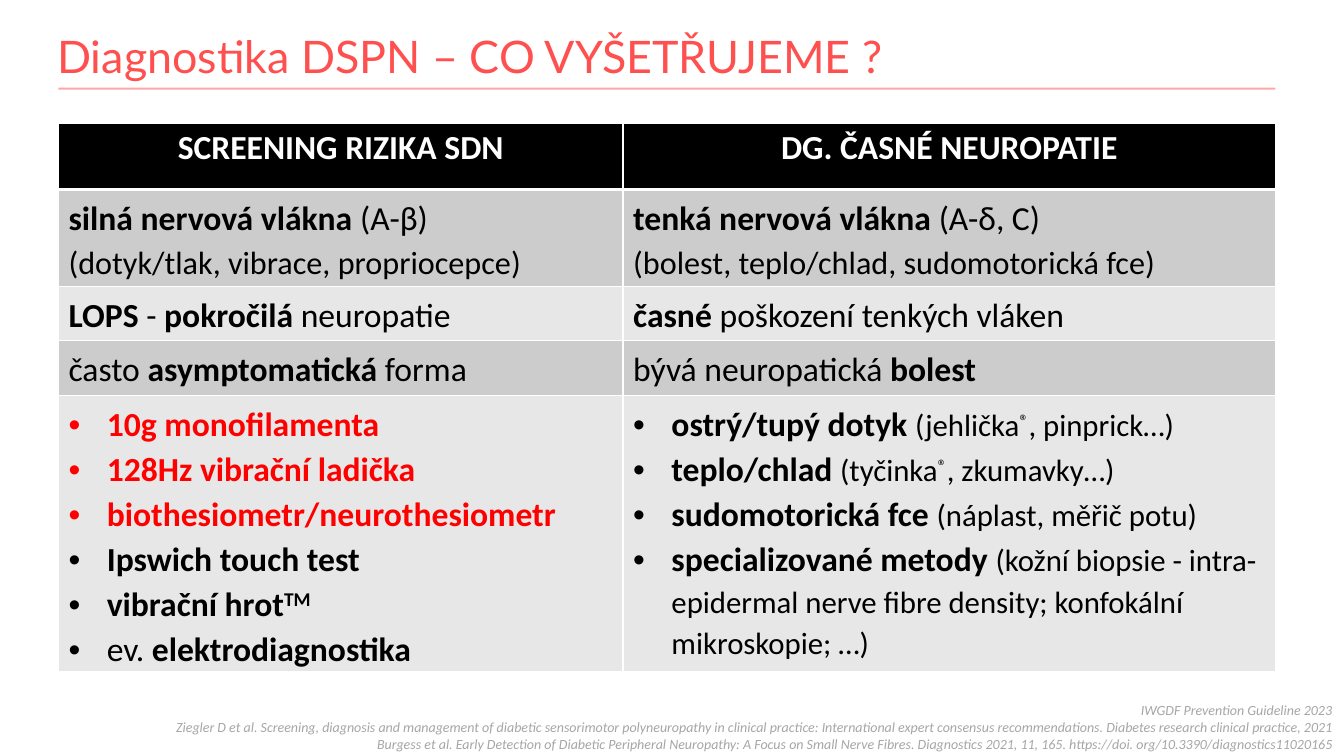
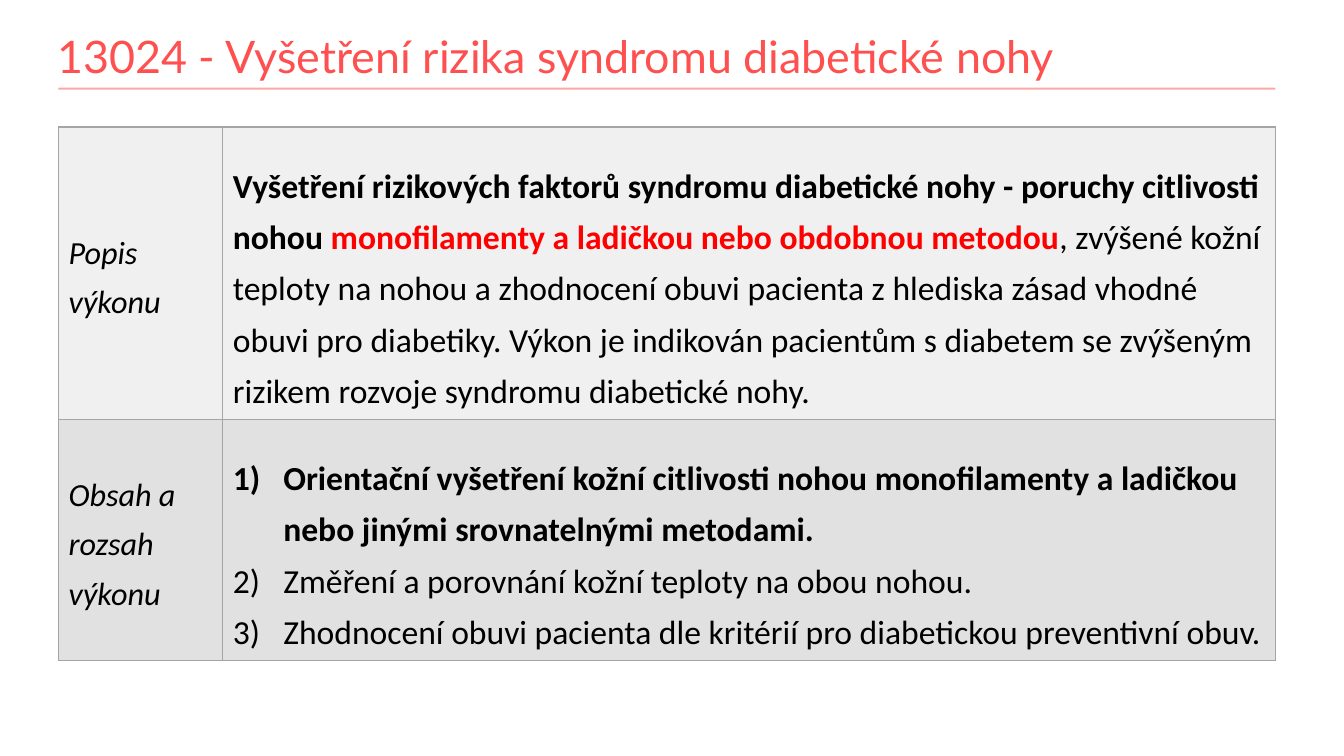
import lxml.etree
import pptx
import pptx.dml.color
import pptx.enum.shapes
import pptx.enum.text
import pptx.oxml.ns
import pptx.util

Inches = pptx.util.Inches
Pt = pptx.util.Pt
ALIGN = pptx.enum.text.PP_ALIGN
ANCHOR = pptx.enum.text.MSO_ANCHOR

ACCENT, RED, BLACK, WHITE = "FF5050", "FF0000", "000000", "FFFFFF"
LEFT, RIGHT = 0.58, 12.65
BOLD = {"bold": True}
RED_BOLD = {"bold": True, "color": RED}
SMALL = {"size": 22}
SUPER = {"size": 22, "baseline": 30}

DOT = ("buChar", {"char": "•"}, 0.38)
NUMBER = ("buAutoNum", {"type": "arabicParenR"}, 0.5)


def rgb(value):
    return pptx.dml.color.RGBColor.from_string(value)


def add_child(parent, tag, **attributes):
    return lxml.etree.SubElement(parent, pptx.oxml.ns.qn("a:" + tag), attributes)


def add_run(paragraph, text, size=24, font="Calibri", color=BLACK, bold=False,
            italic=False, baseline=0):
    run = paragraph.add_run()
    run.text = text
    run.font.size = Pt(size)
    run.font.name = font
    run.font.color.rgb = rgb(color)
    run.font.bold = bold
    run.font.italic = italic
    if baseline:
        run.font._element.set("baseline", str(baseline * 1000))


def set_bullet(paragraph, bullet):
    tag, attributes, indent = bullet
    properties = paragraph._p.get_or_add_pPr()
    properties.set("marL", str(Inches(indent)))
    properties.set("indent", str(-Inches(indent)))
    add_child(properties, "buFont", typeface="Arial" if tag == "buChar" else "+mj-lt")
    add_child(properties, tag, **attributes)


def write(frame, paragraphs, align=ALIGN.LEFT, spacing=None, bullet=None, **style):
    """Fill a frame; each paragraph is a string or a list of (text, format) runs."""
    frame.word_wrap = True
    for index, runs in enumerate(paragraphs):
        paragraph = frame.paragraphs[0] if index == 0 else frame.add_paragraph()
        paragraph.alignment = align
        if spacing:
            paragraph.line_spacing = spacing
        if bullet:
            set_bullet(paragraph, bullet)
        for text, own in [(runs, {})] if isinstance(runs, str) else runs:
            add_run(paragraph, text, **{**style, **own})


def add_text(slide, left, top, width, height, paragraphs, **style):
    box = slide.shapes.add_textbox(Inches(left), Inches(top), Inches(width), Inches(height))
    write(box.text_frame, paragraphs, **style)


def add_title(slide, title):
    rule = slide.shapes.add_connector(
        pptx.enum.shapes.MSO_CONNECTOR.STRAIGHT,
        Inches(LEFT), Inches(0.88), Inches(RIGHT), Inches(0.88))
    rule.line.color.rgb = rgb(ACCENT)
    rule.line.width = Pt(1.5)
    color = rule._element.spPr.find(".//" + pptx.oxml.ns.qn("a:srgbClr"))
    add_child(color, "alpha", val="50000")
    add_child(rule._element.spPr, "effectLst")
    add_text(slide, 0.47, 0.24, 12.28, 0.64, [title], size=32, font="Lato", color=ACCENT)


def add_table(slide, top, columns, rows):
    shape = slide.shapes.add_table(
        len(rows), len(columns), Inches(LEFT), Inches(top),
        Inches(sum(columns)), Inches(sum(rows)))
    table = shape.table
    table.first_row = table.horz_banding = False
    for column, width in zip(table.columns, columns):
        column.width = Inches(width)
    for row, height in zip(table.rows, rows):
        row.height = Inches(height)
    return table


def format_cell(cell, fill, border, widths=(1, 1, 1, 1)):
    """Set fill and borders; widths run left, right, top, bottom."""
    properties = cell._tc.get_or_add_tcPr()
    for side, width in zip("LRTB", widths):
        line = add_child(properties, "ln" + side, w=str(Pt(width)))
        add_child(add_child(line, "solidFill"), "srgbClr", val=border)
    cell.fill.solid()
    cell.fill.fore_color.rgb = rgb(fill)


def build_examination(slide):
    add_title(slide, "Diagnostika DSPN – CO VYŠETŘUJEME ?")
    table = add_table(slide, 1.22, [5.6, 6.47], [0.66, 0.96, 0.54, 0.54, 2.74])

    for cell, heading in zip(table.rows[0].cells,
                             ["SCREENING RIZIKA SDN", "DG. ČASNÉ NEUROPATIE"]):
        format_cell(cell, BLACK, WHITE, (1, 1, 1, 3))
        write(cell.text_frame, [heading], align=ALIGN.CENTER, color=WHITE, bold=True)

    detail = {"size": 23}
    body = [
        ([[("silná nervová vlákna ", BOLD), ("(A-β)", {})],
          [("(dotyk/tlak, vibrace, propriocepce)", detail)]],
         [[("tenká nervová vlákna ", BOLD), ("(A-δ, C)", {})],
          [("(bolest, teplo/chlad, sudomotorická fce)", detail)]]),
        ([[("LOPS", BOLD), (" - ", {}), ("pokročilá", BOLD), (" neuropatie", {})]],
         [[("časné", BOLD), (" poškození tenkých vláken", {})]]),
        ([[("často ", {}), ("asymptomatická", BOLD), (" forma", {})]],
         [[("bývá neuropatická ", {}), ("bolest", BOLD)]]),
        ([[("10g monofilamenta", RED_BOLD)],
          [("128Hz vibrační ladička", RED_BOLD)],
          [("biothesiometr/neurothesiometr", RED_BOLD)],
          [("Ipswich touch test", BOLD)],
          [("vibrační hrot", BOLD), ("TM", {"bold": True, "baseline": 30})],
          [("ev. ", {}), ("elektrodiagnostika", BOLD)]],
         [[("ostrý/tupý dotyk ", BOLD), ("(jehlička", SMALL), ("®", SUPER),
           (", pinprick…)", SMALL)],
          [("teplo/chlad ", BOLD), ("(tyčinka", SMALL), ("®", SUPER),
           (", zkumavky…)", SMALL)],
          [("sudomotorická fce ", BOLD), ("(náplast, měřič potu)", SMALL)],
          [("specializované metody ", BOLD),
           ("(kožní biopsie - intra-epidermal nerve fibre density; "
            "konfokální mikroskopie; …)", SMALL)]]),
    ]
    for index, contents in enumerate(body, start=1):
        bullet = DOT if index == len(body) else None
        top_border = 3 if index == 1 else 1
        for cell, paragraphs in zip(table.rows[index].cells, contents):
            format_cell(cell, "CCCCCC" if index % 2 else "E7E7E7", WHITE,
                        (1, 1, top_border, 1))
            write(cell.text_frame, paragraphs, spacing=1.1, bullet=bullet)

    add_text(slide, LEFT, 6.91, 12.73, 0.6, [
        "IWGDF Prevention Guideline 2023",
        "Ziegler D et al. Screening, diagnosis and management of diabetic sensorimotor "
        "polyneuropathy in clinical practice: International expert consensus "
        "recommendations. Diabetes research clinical practice, 2021",
        "Burgess et al. Early Detection of Diabetic Peripheral Neuropathy: A Focus on Small "
        "Nerve Fibres. Diagnostics 2021, 11, 165. "
        "https://doi. org/10.3390/diagnostics11020165",
    ], align=ALIGN.RIGHT, size=10, color="A6A6A6", italic=True)


def build_procedure(slide):
    add_title(slide, "13024 - Vyšetření rizika syndromu diabetické nohy")
    table = add_table(slide, 1.26, [1.63, 10.44], [2.9, 2.39])
    content = [
        ("Popis výkonu", "F0F0F0", None, [[
            ("Vyšetření rizikových faktorů syndromu diabetické nohy - "
             "poruchy citlivosti nohou ", BOLD),
            ("monofilamenty a ladičkou nebo obdobnou metodou", RED_BOLD),
            (", zvýšené kožní teploty na nohou a zhodnocení obuvi pacienta z hlediska "
             "zásad vhodné obuvi pro diabetiky. Výkon je indikován pacientům s diabetem "
             "se zvýšeným rizikem rozvoje syndromu diabetické nohy.", {})]]),
        ("Obsah a rozsah výkonu", "E1E1E1", NUMBER, [
            [("Orientační vyšetření kožní citlivosti nohou monofilamenty a ladičkou "
              "nebo jinými srovnatelnými metodami.", BOLD)],
            "Změření a porovnání kožní teploty na obou nohou.",
            "Zhodnocení obuvi pacienta dle kritérií pro diabetickou preventivní obuv."]),
    ]
    for row, (label, fill, bullet, paragraphs) in zip(table.rows, content):
        label_cell, text_cell = row.cells
        for cell in row.cells:
            format_cell(cell, fill, "A5A5A5")
        label_cell.vertical_anchor = ANCHOR.MIDDLE
        write(label_cell.text_frame, [label], spacing=1.25, size=23, italic=True)
        text_cell.margin_top = Inches(0.29)
        write(text_cell.text_frame, paragraphs, spacing=1.25, bullet=bullet)


def main():
    presentation = pptx.Presentation()
    presentation.slide_width = Inches(13.33)
    presentation.slide_height = Inches(7.5)
    for build in (build_examination, build_procedure):
        build(presentation.slides.add_slide(presentation.slide_layouts[6]))
    presentation.save("out.pptx")


if __name__ == "__main__":
    main()
